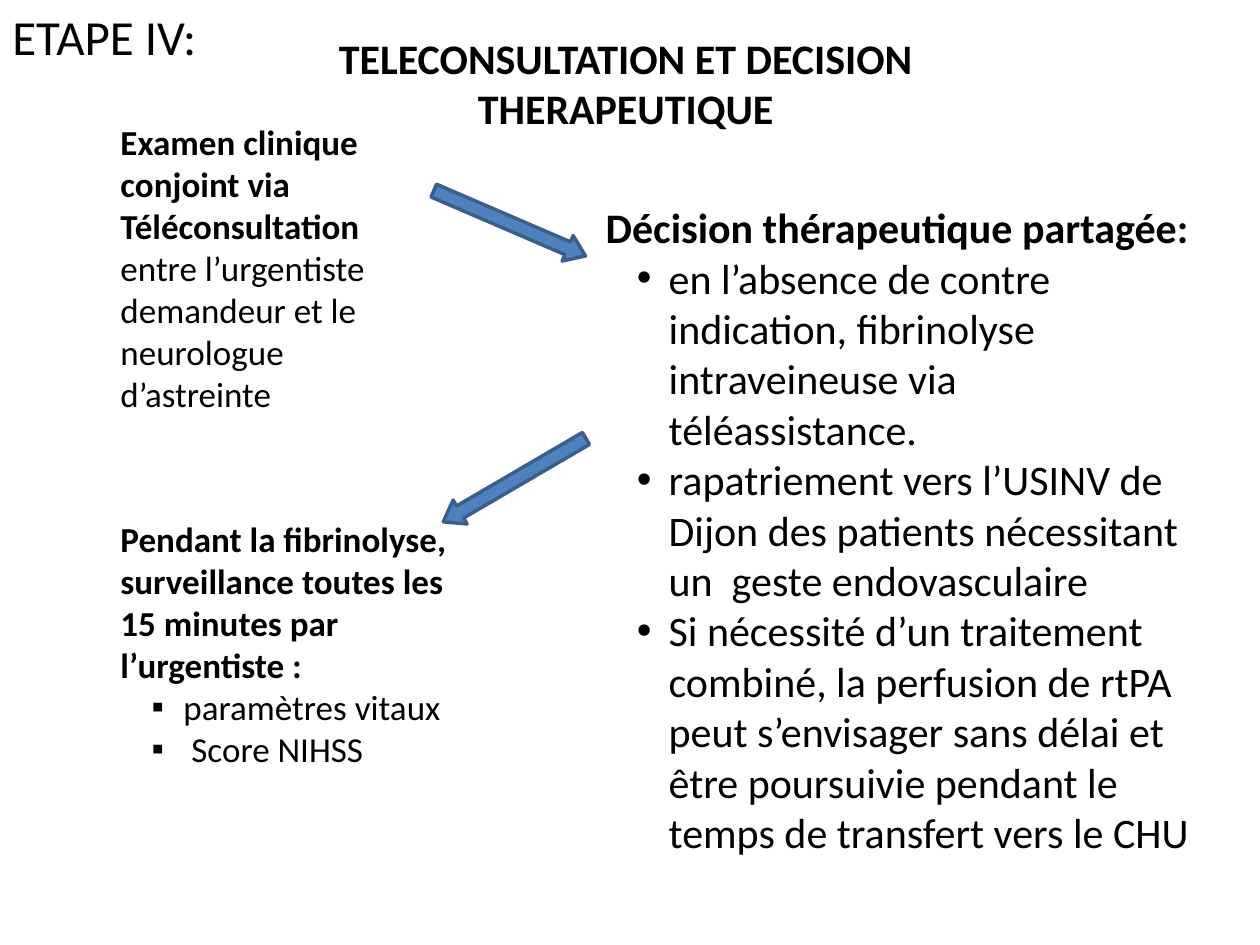
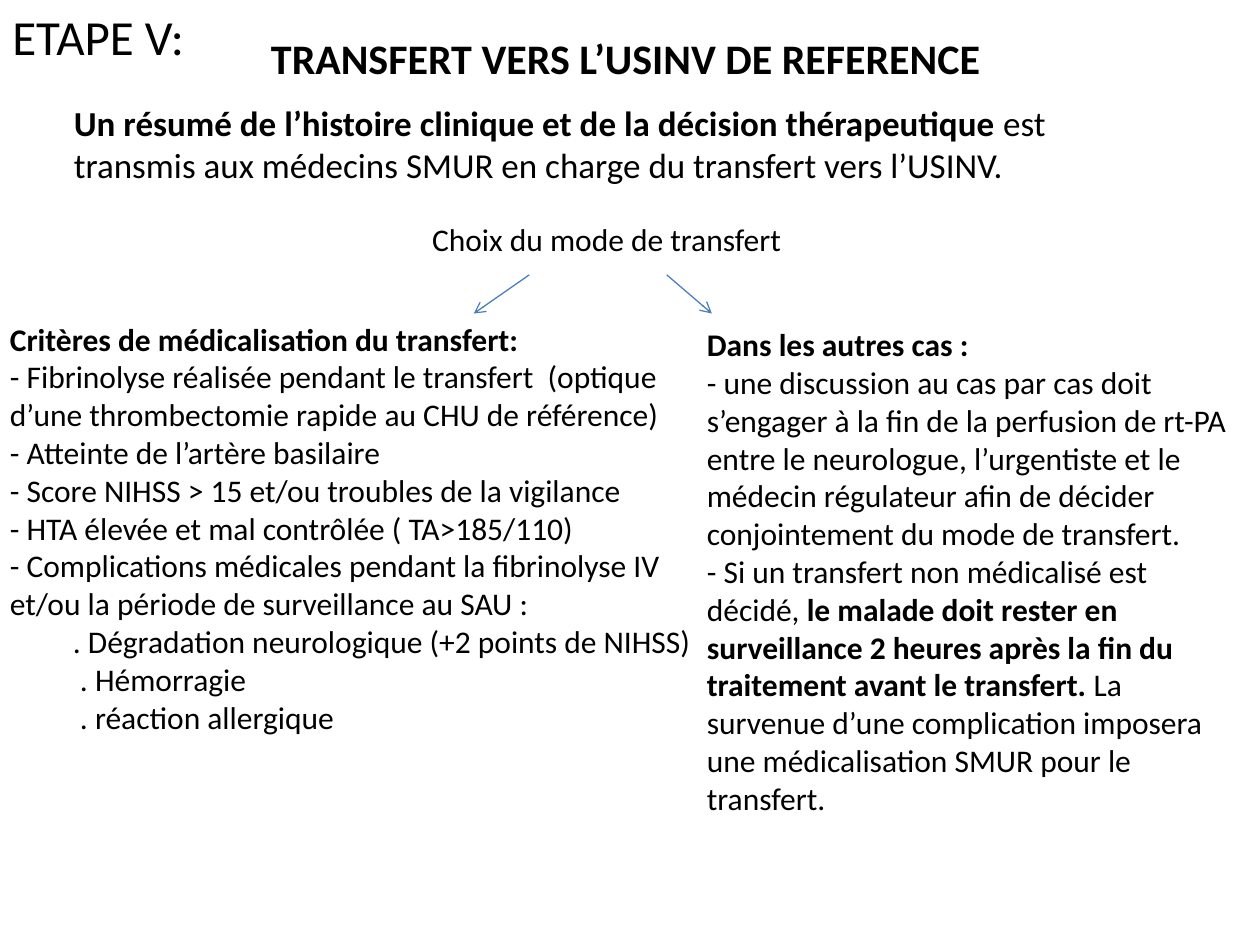
from dataclasses import dataclass

from lxml.etree import SubElement
from pptx import Presentation
from pptx.dml.color import RGBColor
from pptx.enum.shapes import MSO_CONNECTOR, MSO_SHAPE
from pptx.enum.text import MSO_AUTO_SIZE, PP_ALIGN
from pptx.oxml.ns import qn
from pptx.util import Cm, Pt

FONT = "Calibri"
BLACK, BLUE, DARK_BLUE, LINE_BLUE = "000000", "4F81BD", "3A5F8C", "4B7EBC"
INDENT, HANGING = Cm(1.27), Cm(-0.64)


@dataclass(frozen=True)
class Para:
    text: str
    level: int = 0
    bullet: str = ""


@dataclass(frozen=True)
class TextBox:
    left: float
    top: float
    width: float
    height: float
    size: int
    paras: list[Para]
    align: PP_ALIGN = PP_ALIGN.LEFT


@dataclass(frozen=True)
class BlockArrow:
    left: float
    top: float
    rotation: float


@dataclass(frozen=True)
class LineArrow:
    start_x: float
    end_x: float


DECISION_BOXES = [
    TextBox(2.18, 2.31, 5.89, 6.17, 20, [
        Para("**Examen clinique conjoint via Téléconsultation **"
             "entre l’urgentiste demandeur et le neurologue d’astreinte"),
    ]),
    TextBox(11.96, 3.94, 12.37, 14.63, 24, [
        Para("**Décision thérapeutique partagée:**"),
        Para("en l’absence de contre indication, fibrinolyse intraveineuse "
             "via téléassistance.", 1, "•"),
        Para("rapatriement vers l’USINV de Dijon des patients nécessitant "
             "un  geste endovasculaire", 1, "•"),
        Para("Si nécessité d’un traitement combiné, la perfusion de rtPA peut "
             "s’envisager sans délai et être poursuivie pendant le temps de "
             "transfert vers le CHU", 1, "•"),
    ]),
    TextBox(2.18, 10.31, 7.39, 6.25, 20, [
        Para("**Pendant la fibrinolyse, surveillance toutes les 15 minutes "
             "par l’urgentiste :**"),
        Para("paramètres vitaux", 1, "▪"),
        Para(" Score NIHSS", 1, "▪"),
    ]),
]
DECISION_ARROWS = [BlockArrow(8.71, 9.4, 329.7), BlockArrow(8.61, 4.22, 203.3)]

TRANSFER_BOXES = [
    TextBox(1.24, 1.93, 20.85, 1.96, 20, [
        Para("**Un résumé de l’histoire clinique et de la décision "
             "thérapeutique **est transmis aux médecins SMUR en charge du "
             "transfert vers l’USINV."),
    ]),
    TextBox(-0.05, 6.32, 14.58, 10.26, 18, [
        Para("**Critères de médicalisation du transfert:**"),
        Para("- Fibrinolyse réalisée pendant le transfert  (optique d’une "
             "thrombectomie rapide au CHU de référence)"),
        Para("- Atteinte de l’artère basilaire"),
        Para("- Score NIHSS > 15 et/ou troubles de la vigilance"),
        Para("- HTA élevée et mal contrôlée ( TA>185/110)"),
        Para("- Complications médicales pendant la fibrinolyse IV et/ou la "
             "période de surveillance au SAU :"),
        Para(". Dégradation neurologique (+2 points de NIHSS)", 1),
        Para(" . Hémorragie", 1),
        Para(" . réaction allergique", 1),
    ]),
    TextBox(14, 6.43, 11.4, 11.02, 18, [
        Para("**Dans les autres cas :**"),
        Para("- une discussion au cas par cas doit s’engager à la fin de la "
             "perfusion de rt-PA entre le neurologue, l’urgentiste et le "
             "médecin régulateur afin de décider conjointement du mode de "
             "transfert."),
        Para("- Si un transfert non médicalisé est décidé, **le malade doit "
             "rester en surveillance 2 heures après la fin du traitement "
             "avant le transfert. **La survenue d’une complication imposera "
             "une médicalisation SMUR pour le transfert."),
    ]),
    TextBox(8.46, 4.32, 11.07, 1.02, 18, [Para("Choix du mode de transfert")]),
]
TRANSFER_ARROWS = [LineArrow(10.67, 9.55), LineArrow(13.44, 14.35)]


def rgb(value: str) -> RGBColor:
    return RGBColor.from_string(value)


def set_format(target, **values) -> None:
    for name, value in values.items():
        setattr(target, name, value)


def add_runs(p, text: str, size: int) -> None:
    """Write text in runs; parts between ** marks are bold."""
    for i, part in enumerate(text.split("**")):
        if part:
            r = p.add_run()
            r.text = part
            set_format(r.font, name=FONT, size=Pt(size), bold=i % 2 == 1)
            r.font.color.rgb = rgb(BLACK)


def indent_paragraph(p, para: Para) -> None:
    p.level = para.level
    pPr = p._p.get_or_add_pPr()
    pPr.set("marL", str(INDENT))
    pPr.set("indent", str(HANGING if para.bullet else 0))
    if para.bullet:
        SubElement(pPr, qn("a:buFont")).set("typeface", "Arial")
        SubElement(pPr, qn("a:buChar")).set("char", para.bullet)


def add_text(slide, box: TextBox) -> None:
    sp = slide.shapes.add_textbox(
        Cm(box.left), Cm(box.top), Cm(box.width), Cm(box.height))
    tf = sp.text_frame
    set_format(tf, word_wrap=True, auto_size=MSO_AUTO_SIZE.SHAPE_TO_FIT_TEXT)
    for i, para in enumerate(box.paras):
        p = tf.add_paragraph() if i else tf.paragraphs[0]
        p.alignment = box.align
        if para.level:
            indent_paragraph(p, para)
        add_runs(p, para.text, box.size)


def add_block_arrow(slide, arrow: BlockArrow) -> None:
    sp = slide.shapes.add_shape(
        MSO_SHAPE.LEFT_ARROW, Cm(arrow.left), Cm(arrow.top), Cm(3.33), Cm(0.56))
    sp.rotation = arrow.rotation
    sp.adjustments[1] = 0.7
    sp.shadow.inherit = False
    sp.fill.solid()
    sp.fill.fore_color.rgb = rgb(BLUE)
    sp.line.color.rgb = rgb(DARK_BLUE)
    sp.line.width = Pt(2)


def add_line_arrow(slide, arrow: LineArrow) -> None:
    line = slide.shapes.add_connector(
        MSO_CONNECTOR.STRAIGHT,
        Cm(arrow.start_x), Cm(5.54), Cm(arrow.end_x), Cm(6.32))
    line.line.color.rgb = rgb(LINE_BLUE)
    line.line.width = Pt(0.75)
    SubElement(line.line._get_or_add_ln(), qn("a:tailEnd")).set("type", "arrow")
    SubElement(line._element.spPr, qn("a:effectLst"))


def add_step_slide(prs, step: str, title: str, title_height: float,
                   boxes: list[TextBox]):
    slide = prs.slides.add_slide(prs.slide_layouts[6])
    header = [
        TextBox(0, 0, 4.22, 1.45, 28, [Para(step)]),
        TextBox(3.84, 0.53, 17.55, title_height, 24, [Para(f"**{title}**")],
                PP_ALIGN.CENTER),
    ]
    for box in header + boxes:
        add_text(slide, box)
    return slide


def main() -> None:
    prs = Presentation()
    set_format(prs, slide_width=Cm(25.4), slide_height=Cm(19.05))

    slide = add_step_slide(prs, "ETAPE IV:",
                           "TELECONSULTATION ET DECISION THERAPEUTIQUE", 2.31,
                           DECISION_BOXES)
    for arrow in DECISION_ARROWS:
        add_block_arrow(slide, arrow)

    slide = add_step_slide(prs, "ETAPE V:",
                           "TRANSFERT VERS L’USINV DE REFERENCE", 1.3,
                           TRANSFER_BOXES)
    for arrow in TRANSFER_ARROWS:
        add_line_arrow(slide, arrow)

    prs.save("out.pptx")


if __name__ == "__main__":
    main()
